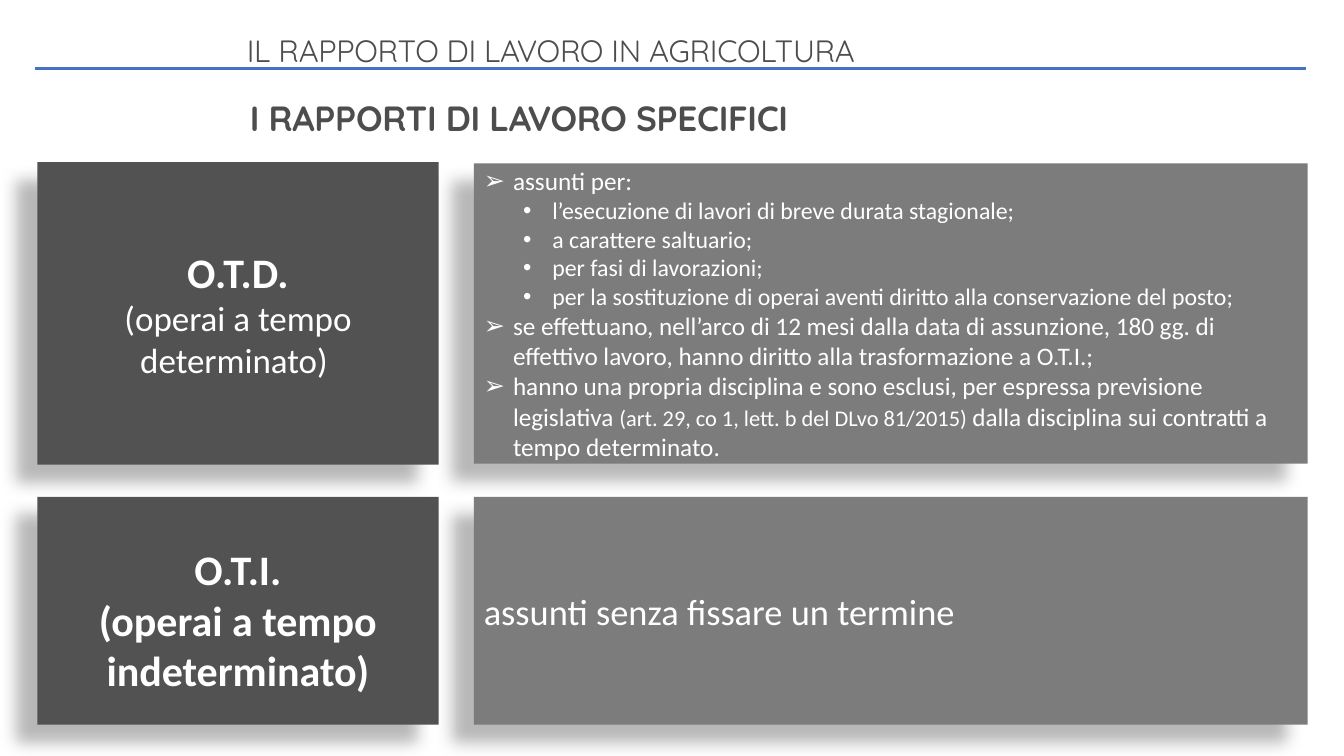
from lxml import etree
from pptx import Presentation
from pptx.dml.color import RGBColor
from pptx.enum.shapes import MSO_CONNECTOR, MSO_SHAPE
from pptx.enum.text import MSO_ANCHOR, PP_ALIGN
from pptx.oxml.ns import qn
from pptx.util import Inches, Pt

RECT = MSO_SHAPE.RECTANGLE
LINE = MSO_CONNECTOR.STRAIGHT
MIDDLE = MSO_ANCHOR.MIDDLE
LEFT, CENTER = PP_ALIGN.LEFT, PP_ALIGN.CENTER

COLORS = {"rule": "4472C4", "title": "4D4D4D", "dark": "525252",
          "mid": "7C7C7C", "text": "FFFFFF", "shade": "000000"}

TERMS = [
    ("➢", [("assunti per:", 18)]),
    ("•", [("l’esecuzione di lavori di breve durata stagionale;", 17)]),
    ("•", [("a carattere saltuario;", 17)]),
    ("•", [("per fasi di lavorazioni;", 17)]),
    ("•", [("per la sostituzione di operai aventi diritto alla conservazione del posto;", 17)]),
    ("➢", [("se effettuano, nell’arco di 12 mesi dalla data di assunzione, 180 gg. di "
            "effettivo lavoro, hanno diritto alla trasformazione a O.T.I.;", 18)]),
    ("➢", [("hanno una propria disciplina e sono esclusi, per espressa previsione legislativa ", 18),
           ("(art. 29, co 1, lett. b del DLvo 81/2015) ", 16),
           ("dalla disciplina sui contratti a tempo determinato.", 18)]),
]
INDENT = {"➢": 0.29, "•": 0.68}
HANG = 0.29


def paint(run, size, color="text", bold=False, face="Calibri"):
    """Format one run."""
    font = run.font
    font.name, font.size, font.bold = face, Pt(size), bold
    font.color.rgb = RGBColor.from_string(COLORS[color])


def add_rule(slide, left, top, width):
    """Draw the line under the heading."""
    rule = slide.shapes.add_connector(
        LINE, Inches(left), Inches(top), Inches(left + width), Inches(top))
    rule.line.color.rgb = RGBColor.from_string(COLORS["rule"])
    rule.line.width = Pt(2.25)
    etree.SubElement(rule._element.spPr, qn("a:effectLst"))


def add_title(slide, left, top, text, size, bold):
    """Write one heading line."""
    box = slide.shapes.add_textbox(Inches(left), Inches(top), Inches(8.64), Inches(0.33))
    frame = box.text_frame
    frame.word_wrap = True
    para = frame.paragraphs[0]
    para.text = text
    para.line_spacing = 0.9
    run = para.runs[0]
    paint(run, size, "title", bold, "Quicksand")
    run.font._element.set("spc", "-20")


def add_shade(shape):
    """Give a panel its soft shadow, down and to the left."""
    shape.shadow.inherit = False
    effects = shape._element.spPr.find(qn("a:effectLst"))
    shade = etree.SubElement(
        effects, qn("a:outerShdw"), blurRad=str(Pt(11.8)), dist=str(Pt(19.7)),
        dir=str(141 * 60000), algn="ctr", rotWithShape="0")
    color = etree.SubElement(shade, qn("a:srgbClr"), val=COLORS["shade"])
    etree.SubElement(color, qn("a:alpha"), val="28000")


def add_panel(slide, box, color):
    """Draw a shaded panel and return its text frame."""
    panel = slide.shapes.add_shape(RECT, *map(Inches, box))
    panel.fill.solid()
    panel.fill.fore_color.rgb = RGBColor.from_string(COLORS[color])
    panel.line.fill.background()
    add_shade(panel)
    frame = panel.text_frame
    frame.word_wrap = True
    frame.vertical_anchor = MIDDLE
    return frame


def add_lines(slide, box, color, align, lines, inset=0.05):
    """Fill a panel with plain lines of (text, size, bold)."""
    frame = add_panel(slide, box, color)
    frame.margin_top = Inches(inset)
    frame.text = "\n".join(text for text, _, _ in lines)
    for para, (_, size, bold) in zip(frame.paragraphs, lines):
        para.alignment = align
        paint(para.runs[0], size, bold=bold)


def add_list(slide, box, color, items):
    """Fill a panel with a two-level bullet list."""
    frame = add_panel(slide, box, color)
    for i, (mark, parts) in enumerate(items):
        para = frame.add_paragraph() if i else frame.paragraphs[0]
        para.alignment = LEFT
        para.level = 1 if mark == "•" else 0
        props = para._p.get_or_add_pPr()
        props.set("marL", str(Inches(INDENT[mark])))
        props.set("indent", str(-Inches(HANG)))
        etree.SubElement(props, qn("a:buFont"), typeface="Arial")
        etree.SubElement(props, qn("a:buChar"), char=mark)
        for text, size in parts:
            run = para.add_run()
            run.text = text
            paint(run, size)


def main():
    """Build the slide and save it."""
    deck = Presentation()
    deck.slide_width, deck.slide_height = Inches(13.33), Inches(7.5)
    slide = deck.slides.add_slide(deck.slide_layouts[6])
    add_rule(slide, 0.35, 0.68, 12.6)
    add_title(slide, 2.35, 0.31, "IL RAPPORTO DI LAVORO IN AGRICOLTURA", 22, False)
    add_title(slide, 2.38, 0.96, "I RAPPORTI DI LAVORO SPECIFICI", 25, True)
    name, note = (0.37, 3.98), (4.7, 8.27)
    low = 4.93, 2.26
    add_lines(slide, (name[0], 1.61, name[1], 3), "dark", CENTER,
              [("O.T.D.", 30, True), ("(operai a tempo determinato) ", 25, False)])
    add_lines(slide, (name[0], low[0], name[1], low[1]), "dark", CENTER,
              [("O.T.I.", 30, True), ("(operai a tempo indeterminato)", 30, True)], 0.22)
    add_list(slide, (note[0], 1.62, note[1], 2.98), "mid", TERMS)
    add_lines(slide, (note[0], low[0], note[1], low[1]), "mid", LEFT,
              [("assunti senza fissare un termine", 26, False)])
    deck.save("out.pptx")


if __name__ == "__main__":
    main()
